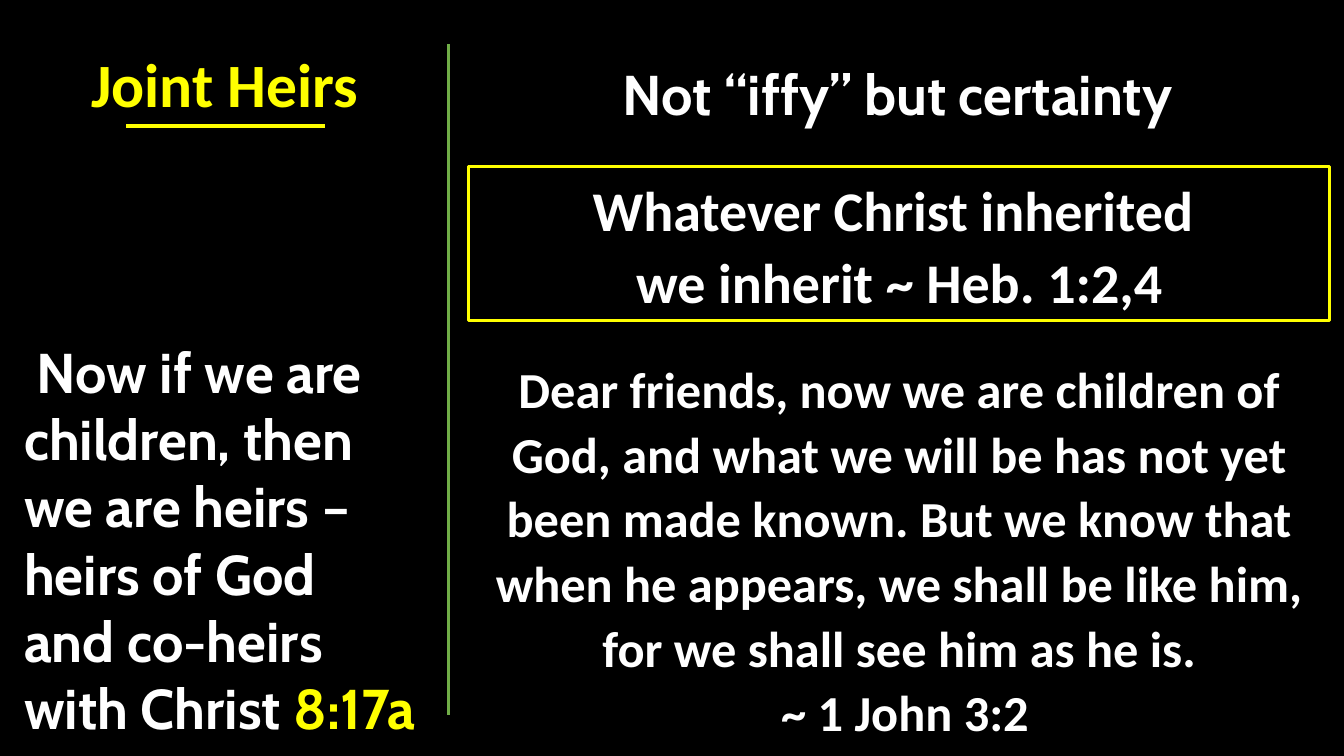
from pptx import Presentation
from pptx.dml.color import RGBColor
from pptx.enum.shapes import MSO_CONNECTOR, MSO_SHAPE
from pptx.enum.text import MSO_ANCHOR, MSO_AUTO_SIZE, PP_ALIGN
from pptx.oxml.ns import qn
from pptx.util import Emu, Pt
from lxml.etree import SubElement

BLACK = RGBColor(0x00, 0x00, 0x00)
WHITE = RGBColor(0xFF, 0xFF, 0xFF)
YELLOW = RGBColor(0xFF, 0xFF, 0x00)
GREEN = RGBColor(0x70, 0xAD, 0x47)
SCALE = 9144
SIZE = (1333, 750)
MID, LEFT = PP_ALIGN.CENTER, PP_ALIGN.LEFT

TEXTS = [
    ("title", (18, 41, 410, 84), "Calibri", 44, MID, 1.0,
     [[("Joint Heirs", YELLOW)]]),
    ("text", (14, 330, 410, 414), "Cabin", 40, LEFT, 1.0,
     [[(" Now if we are children, then we are heirs – heirs of God "
        "and co-heirs with Christ ", WHITE), ("8:17a", YELLOW)]]),
    ("text", (465, 54, 850, 77), "Cabin", 40, MID, 1.0,
     [[("Not “iffy” but certainty", WHITE)]]),
    ("frame", (465, 165, 854, 153), "Calibri", 40, MID, 1.07,
     [[("Whatever Christ inherited ", WHITE)],
      [("we inherit ~ Heb. 1:2,4", WHITE)]]),
    ("text", (465, 346, 854, 398), "Calibri", 36, MID, 1.07,
     [[("Dear friends, now we are children of God, and what we will be "
        "has not yet been made known. But we know that when he appears, "
        "we shall be like him, for we shall see him as he is.", WHITE)],
      [(" ~ 1 John 3:2", WHITE)]]),
]
RULES = [((445, 44, 445, 709), GREEN), ((125, 125, 322, 125), YELLOW)]


def px(nums):
    return [Emu(n * SCALE) for n in nums]


def style(item, form):
    for key, value in form.items():
        setattr(item, key, value)


def stroke(line, color):
    line.color.rgb = color
    line.width = Pt(2.25)


def holder(slide, kind, box):
    if kind == "title":
        shape = slide.shapes.title
        style(shape, dict(zip(("left", "top", "width", "height"), px(box))))
    elif kind == "frame":
        shape = slide.shapes.add_shape(MSO_SHAPE.RECTANGLE, *px(box))
        shape.shadow.inherit = False
        shape.fill.background()
        stroke(shape.line, YELLOW)
    else:
        shape = slide.shapes.add_textbox(*px(box))
    return shape


def write(frame, font, size, align, space, paras):
    style(frame, {"word_wrap": True, "auto_size": MSO_AUTO_SIZE.NONE,
                  "vertical_anchor": MSO_ANCHOR.TOP})
    for i, runs in enumerate(paras):
        para = frame.add_paragraph() if i else frame.paragraphs[0]
        style(para, {"alignment": align, "line_spacing": space})
        for words, color in runs:
            run = para.add_run()
            run.text = words
            style(run.font, {"name": font, "size": Pt(size), "bold": True})
            run.font.color.rgb = color


def main():
    """Build the Joint Heirs slide."""
    deck = Presentation()
    deck.slide_width, deck.slide_height = px(SIZE)
    slide = deck.slides.add_slide(deck.slide_layouts[5])
    slide.background.fill.solid()
    slide.background.fill.fore_color.rgb = BLACK
    for kind, box, *form in TEXTS:
        write(holder(slide, kind, box).text_frame, *form)
    for ends, color in RULES:
        rule = slide.shapes.add_connector(MSO_CONNECTOR.STRAIGHT, *px(ends))
        stroke(rule.line, color)
        SubElement(rule._element.spPr, qn("a:effectLst"))
    deck.save("out.pptx")


if __name__ == "__main__":
    main()
